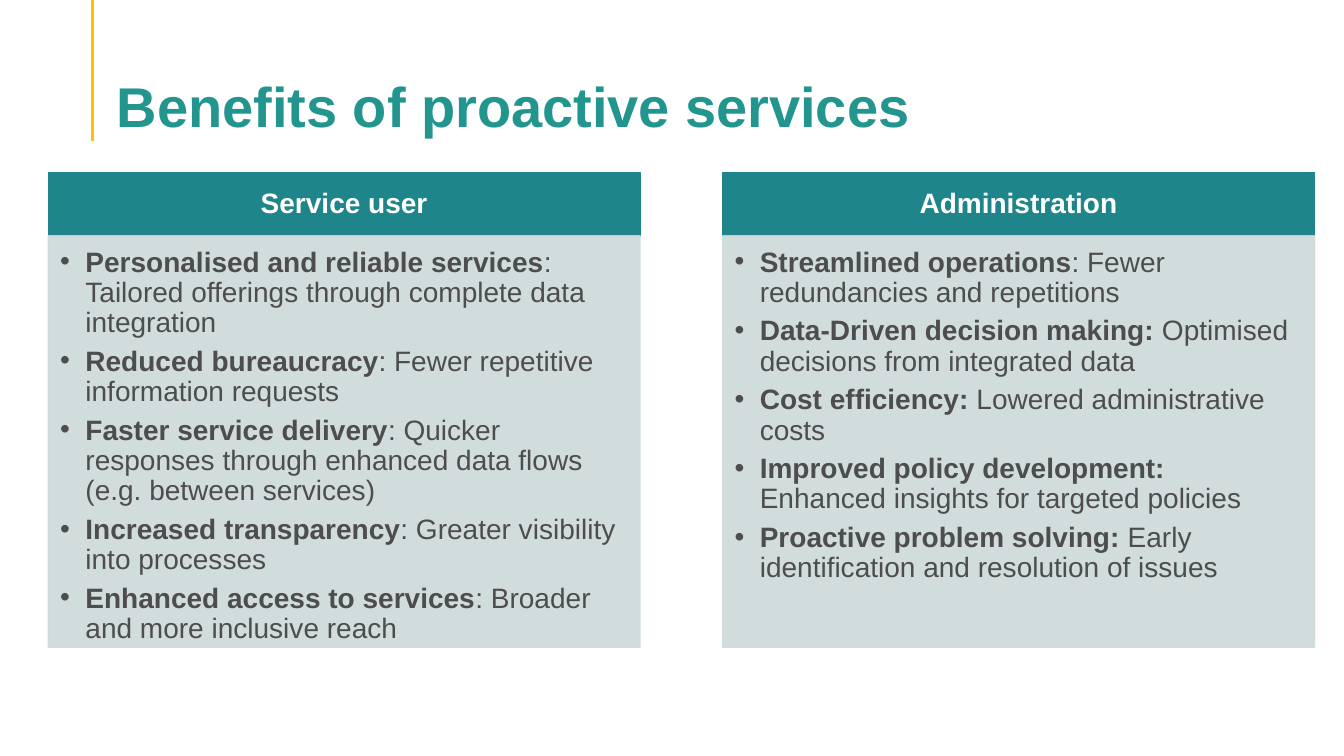
from lxml.etree import SubElement
from pptx import Presentation
from pptx.dml.color import RGBColor
from pptx.enum.shapes import MSO_CONNECTOR, MSO_SHAPE
from pptx.enum.text import MSO_ANCHOR, PP_ALIGN
from pptx.oxml.ns import qn
from pptx.util import Pt

COLORS = {
    "accent": "FFC000",
    "title": "21958E",
    "header": "1E858B",
    "panel": "CDD9DA",
    "text": "4D4D4D",
    "white": "FFFFFF",
}

BENEFITS = {
    "Service user": [
        ("Personalised and reliable services", ": Tailored offerings through complete data integration"),
        ("Reduced bureaucracy", ": Fewer repetitive information requests"),
        ("Faster service delivery", ": Quicker responses through enhanced data flows (e.g. between services)"),
        ("Increased transparency", ": Greater visibility into processes"),
        ("Enhanced access to services", ": Broader and more inclusive reach"),
    ],
    "Administration": [
        ("Streamlined operations", ": Fewer redundancies and repetitions"),
        ("Data-Driven decision making:", " Optimised decisions from integrated data"),
        ("Cost efficiency:", " Lowered administrative costs"),
        ("Improved policy development: ", "Enhanced insights for targeted policies"),
        ("Proactive problem solving: ", "Early identification and resolution of issues"),
    ],
}


def write(shape, paragraphs, size=20, color="text", align=PP_ALIGN.LEFT,
          anchor=MSO_ANCHOR.TOP, insets=(0, 0, 0, 0), bullets=False, after=0):
    """Fill a shape with paragraphs of (bold lead, regular rest)."""
    frame = shape.text_frame
    frame.word_wrap = True
    frame.vertical_anchor = anchor
    (frame.margin_left, frame.margin_top,
     frame.margin_right, frame.margin_bottom) = [Pt(inset) for inset in insets]
    for index, parts in enumerate(paragraphs):
        paragraph = frame.add_paragraph() if index else frame.paragraphs[0]
        paragraph.alignment = align
        paragraph.line_spacing = 0.9
        paragraph.space_after = Pt(after)
        if bullets:
            properties = paragraph._p.get_or_add_pPr()
            properties.set("marL", str(Pt(18)))
            properties.set("indent", str(-Pt(18)))
            SubElement(properties, qn("a:buFont"), typeface="Arial")
            SubElement(properties, qn("a:buChar"), char="•")
        for position, text in enumerate(parts):
            run = paragraph.add_run()
            run.text = text
            run.font.name = "Arial"
            run.font.size = Pt(size)
            run.font.bold = position == 0
            run.font.color.rgb = RGBColor.from_string(COLORS[color])


def add_block(left, top, width, height, color, opacity=100):
    """Add a rectangle whose fill and outline share a colour."""
    block = slide.shapes.add_shape(MSO_SHAPE.RECTANGLE, Pt(left), Pt(top), Pt(width), Pt(height))
    block.shadow.inherit = False
    block.fill.solid()
    block.line.width = Pt(1)
    for paint in (block.fill.fore_color, block.line.color):
        paint.rgb = RGBColor.from_string(COLORS[color])
    if opacity < 100:
        for rgb in block._element.spPr.iter(qn("a:srgbClr")):
            SubElement(rgb, qn("a:alpha"), val=str(opacity * 1000))
    return block


presentation = Presentation()
presentation.slide_width = Pt(960)
presentation.slide_height = Pt(540)
slide = presentation.slides.add_slide(presentation.slide_layouts[6])

# Accent line
accent = slide.shapes.add_connector(MSO_CONNECTOR.STRAIGHT, Pt(66.24), Pt(0), Pt(66.24), Pt(100.8))
accent.line.color.rgb = RGBColor.from_string(COLORS["accent"])
accent.line.width = Pt(2.25)
SubElement(accent._element.spPr, qn("a:effectLst"))

# Title
title = slide.shapes.add_textbox(Pt(76.32), Pt(38.16), Pt(828), Pt(61.92))
write(title, [("Benefits of proactive services",)], size=40, color="title",
      anchor=MSO_ANCHOR.BOTTOM, insets=(7.2, 3.6, 7.2, 0))

# Benefit columns: header above a bulleted panel
FIRST_LEFT, COLUMN_STEP, COLUMN_WIDTH = 34.56, 481.68, 422.64
HEADER_TOP, HEADER_HEIGHT, PANEL_HEIGHT = 123.12, 45.36, 293.76

for column, (audience, benefits) in enumerate(BENEFITS.items()):
    left = FIRST_LEFT + column * COLUMN_STEP
    header = add_block(left, HEADER_TOP, COLUMN_WIDTH, HEADER_HEIGHT, "header")
    write(header, [(audience,)], color="white", align=PP_ALIGN.CENTER,
          anchor=MSO_ANCHOR.MIDDLE, insets=(11.5, 6.5, 11.5, 6.5))
    panel = add_block(left, HEADER_TOP + HEADER_HEIGHT, COLUMN_WIDTH, PANEL_HEIGHT, "panel", opacity=90)
    write(panel, benefits, insets=(8.5, 8.5, 11.5, 12), bullets=True, after=6)

presentation.save("out.pptx")
